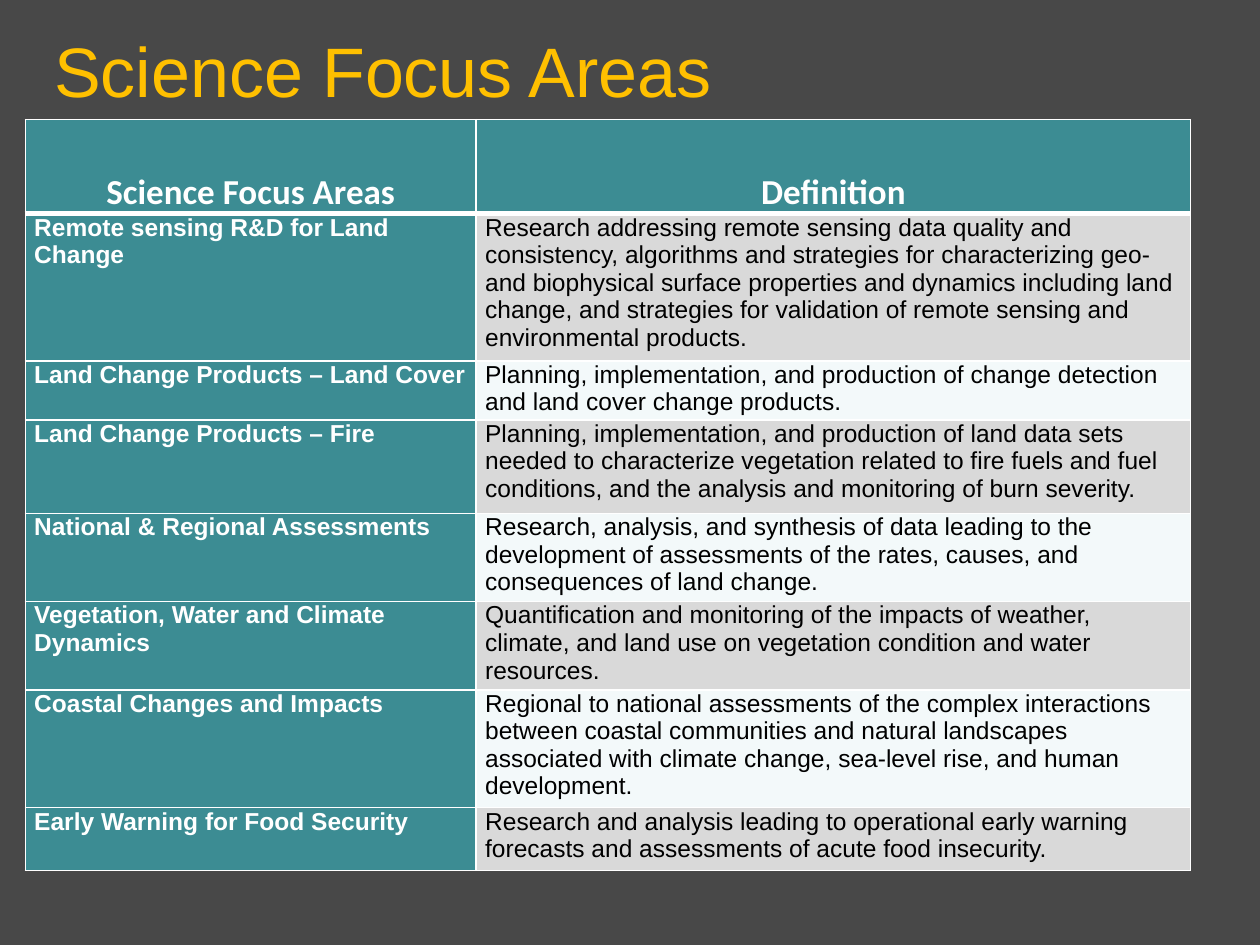
import pptx
import pptx.dml.color
import pptx.enum.text
import pptx.oxml
import pptx.oxml.ns
import pptx.util
from dataclasses import dataclass

Cm = pptx.util.Cm
Pt = pptx.util.Pt
RGB = pptx.dml.color.RGBColor.from_string
ANCHOR = pptx.enum.text.MSO_ANCHOR
ALIGN = pptx.enum.text.PP_ALIGN


@dataclass(frozen=True)
class Theme:
    background: str = "484848"
    title: str = "FFC000"
    teal: str = "3C8C93"
    bands: tuple = ("D9D9D9", "F3F9FA")
    white: str = "FFFFFF"
    black: str = "000000"
    title_size: int = 40
    header_size: int = 20
    body_size: int = 14
    body_font: str = "Arial"
    header_font: str = "Calibri"


theme = Theme()


def write(tf, text, color, align=ALIGN.LEFT, **font):
    """Put one formatted run in the first paragraph of a text frame."""
    p = tf.paragraphs[0]
    p.alignment = align
    r = p.add_run()
    r.text = text
    for name, value in font.items():
        setattr(r.font, name, value)
    r.font.color.rgb = RGB(color)


def set_borders(cell, **widths):
    """Draw white cell borders; widths in points, keyed L, R, T, B."""
    tcPr = cell._tc.get_or_add_tcPr()
    for i, (side, width) in enumerate(widths.items()):
        tcPr.insert(i, pptx.oxml.parse_xml(
            f'<a:ln{side} {pptx.oxml.ns.nsdecls("a")} w="{Pt(width)}">'
            f'<a:solidFill><a:srgbClr val="{theme.white}"/></a:solidFill>'
            f'</a:ln{side}>'))


header = ("Science Focus Areas", "Definition")
focus_areas = [
    (2.97, "Remote sensing R&D for Land Change",
     "Research addressing remote sensing data quality and consistency, algorithms and "
     "strategies for characterizing geo- and biophysical surface properties and dynamics "
     "including land change, and strategies for validation of remote sensing and "
     "environmental products."),
    (1.19, "Land Change Products – Land Cover",
     "Planning, implementation, and production of change detection and land cover change "
     "products."),
    (1.88, "Land Change Products – Fire",
     "Planning, implementation, and production of land data sets needed to characterize "
     "vegetation related to fire fuels and fuel conditions, and the analysis and monitoring "
     "of burn severity."),
    (1.78, "National & Regional Assessments",
     "Research, analysis, and synthesis of data leading to the development of assessments "
     "of the rates, causes, and consequences of land change."),
    (1.27, "Vegetation, Water and Climate Dynamics",
     "Quantification and monitoring of the impacts of weather, climate, and land use on "
     "vegetation condition and water resources."),
    (2.36, "Coastal Changes and Impacts",
     "Regional to national assessments of the complex interactions between coastal "
     "communities and natural landscapes associated with climate change, sea-level rise, "
     "and human development."),
    (1.27, "Early Warning for Food Security",
     "Research and analysis leading to operational early warning forecasts and assessments "
     "of acute food insecurity."),
]
rows = [(1.9, *header)] + focus_areas
col_widths = (9.09, 14.4)

prs = pptx.Presentation()
prs.slide_width, prs.slide_height = Cm(25.4), Cm(19.05)
s = prs.slides.add_slide(prs.slide_layouts[6])
s.background.fill.solid()
s.background.fill.fore_color.rgb = RGB(theme.background)

title = s.shapes.add_textbox(Cm(0.84), Cm(0.38), Cm(23.04), Cm(2.03))
tf = title.text_frame
tf.word_wrap = True
tf.vertical_anchor = ANCHOR.MIDDLE
write(tf, "Science Focus Areas", theme.title,
      name=theme.body_font, size=Pt(theme.title_size))

table = s.shapes.add_table(len(rows), len(col_widths), Cm(0.51), Cm(2.41),
                           Cm(sum(col_widths)), Cm(sum(row[0] for row in rows))).table
for column, width in zip(table.columns, col_widths):
    column.width = Cm(width)

header_font = dict(name=theme.header_font, size=Pt(theme.header_size), bold=True)
body_font = dict(name=theme.body_font, size=Pt(theme.body_size))
cell_format = dict(margin_left=Cm(0.18), margin_right=Cm(0.18), margin_top=0, margin_bottom=0)

for i, (height, *texts) in enumerate(rows):
    table.rows[i].height = Cm(height)
    for j, text in enumerate(texts):
        cell = table.cell(i, j)
        is_header, is_label = i == 0, j == 0
        for name, value in cell_format.items():
            setattr(cell, name, value)
        cell.vertical_anchor = ANCHOR.BOTTOM if is_header else ANCHOR.TOP
        on_teal = is_header or is_label
        cell.fill.solid()
        cell.fill.fore_color.rgb = RGB(theme.teal if on_teal else theme.bands[(i - 1) % 2])
        set_borders(cell, L=1, R=1, T=3 if i == 1 else 1, B=3 if is_header else 1)
        if is_header:
            write(cell.text_frame, text, theme.white, ALIGN.CENTER, **header_font)
        else:
            write(cell.text_frame, text, theme.white if is_label else theme.black,
                  bold=is_label, **body_font)

prs.save("out.pptx")
